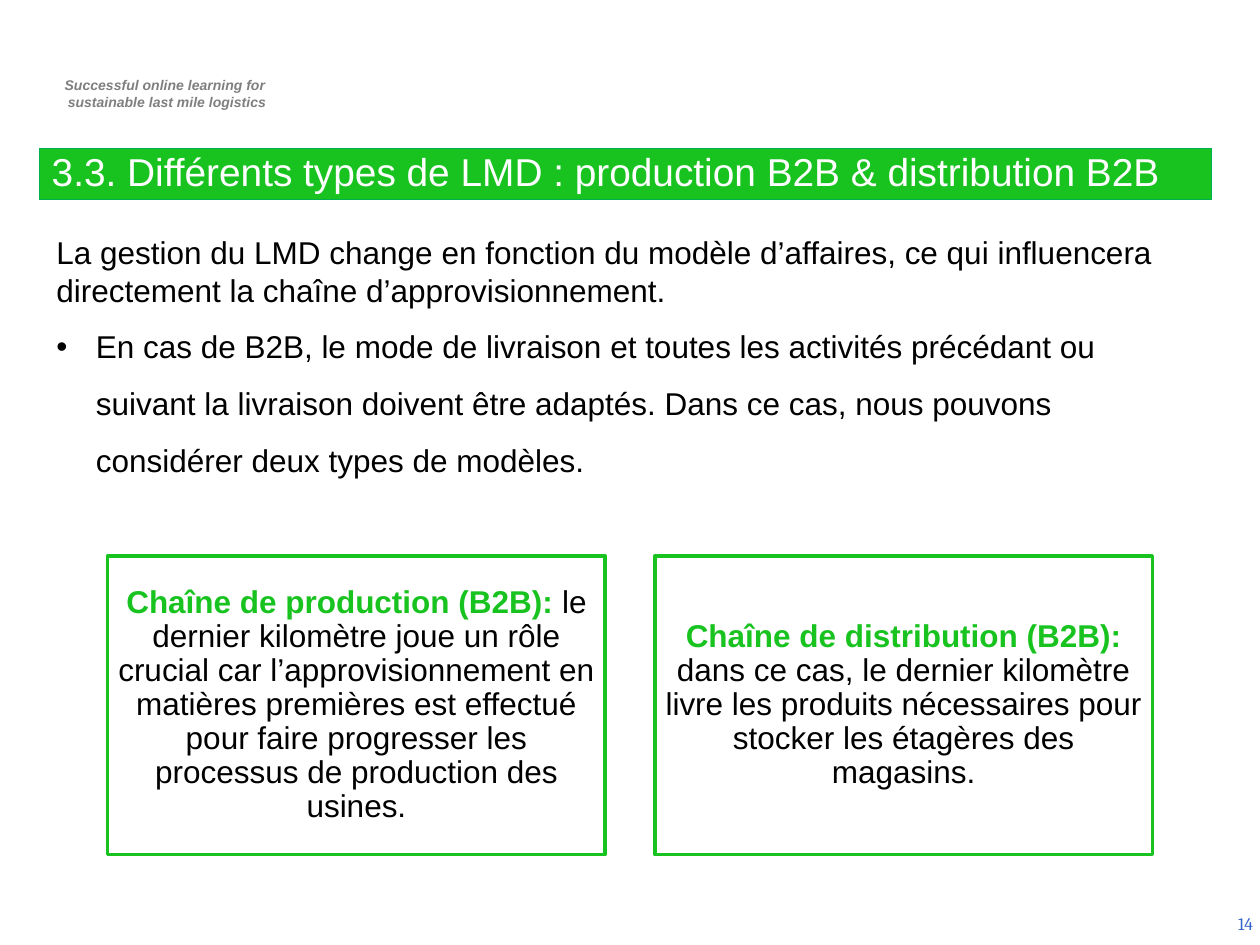
from lxml import etree
from pptx import Presentation
from pptx.dml.color import RGBColor
from pptx.enum import shapes, text
from pptx.oxml.ns import qn
from pptx.util import Pt

GREEN, BLACK, WHITE = "18C320", "000000", "FFFFFF"
LEFT, CENTER, RIGHT = text.PP_ALIGN.LEFT, text.PP_ALIGN.CENTER, text.PP_ALIGN.RIGHT
TOP, MIDDLE, BOTTOM = (text.MSO_ANCHOR.TOP, text.MSO_ANCHOR.MIDDLE,
                       text.MSO_ANCHOR.BOTTOM)


def color(code):
    return RGBColor.from_string(code)


def set_frame(shape, anchor=TOP, pad=(7.2, 3.6)):
    frame = shape.text_frame
    frame.word_wrap = True
    frame.vertical_anchor = anchor
    frame.margin_left = frame.margin_right = Pt(pad[0])
    frame.margin_top = frame.margin_bottom = Pt(pad[1])
    return frame


def add_label(slide, box, anchor=TOP):
    return set_frame(slide.shapes.add_textbox(*map(Pt, box)), anchor)


def add_rect(slide, box, fill, line, width):
    rect = slide.shapes.add_shape(shapes.MSO_SHAPE.RECTANGLE, *map(Pt, box))
    rect.shadow.inherit = False
    rect.fill.solid()
    rect.fill.fore_color.rgb = color(fill)
    rect.line.color.rgb = color(line)
    rect.line.width = Pt(width)
    return rect


def set_indent(para, left, first=0):
    props = para._p.get_or_add_pPr()
    props.set("marL", str(Pt(left)))
    props.set("indent", str(Pt(first)))
    return props


def style(run, size, code, bold=False, italic=False, name="Arial"):
    font = run.font
    font.name, font.size = name, Pt(size)
    font.bold, font.italic = bold, italic
    font.color.rgb = color(code)


def write(para, words, size, code, align=LEFT, spacing=1.0, **look):
    para.text = words
    para.alignment = align
    para.line_spacing = spacing
    style(para.runs[0], size, code, **look)


def add_header(slide, box):
    frame = add_label(slide, box)
    frame.text = "Successful online learning for \nsustainable last mile logistics"
    for para in frame.paragraphs:
        set_indent(para, 2.9)
        write(para, para.text, 8, "7F7F7F", CENTER, bold=True, italic=True)


def add_title(slide, box):
    frame = set_frame(add_rect(slide, box, GREEN, "00B050", 0.75), BOTTOM)
    para = frame.paragraphs[0]
    set_indent(para, 58.3, -58.3)
    write(para, "3.3. Différents types de LMD : production B2B & distribution B2B",
          22.2, WHITE, spacing=0.8)


def add_body(slide, box):
    frame = add_label(slide, box)
    write(frame.paragraphs[0],
          "La gestion du LMD change en fonction du modèle d’affaires, ce qui "
          "influencera directement la chaîne d’approvisionnement.", 18, BLACK)
    para = frame.add_paragraph()
    write(para,
          "En cas de B2B, le mode de livraison et toutes les activités précédant "
          "ou suivant la livraison doivent être adaptés. Dans ce cas, nous pouvons "
          "considérer deux types de modèles.", 18, BLACK, spacing=1.5)
    props = set_indent(para, 22.5, -22.5)
    etree.SubElement(props, qn("a:buFont")).set("typeface", "Arial")
    etree.SubElement(props, qn("a:buChar")).set("char", "•")


def add_card(slide, box, head, words):
    frame = set_frame(add_rect(slide, box, WHITE, GREEN, 2), MIDDLE, (5, 5))
    para = frame.paragraphs[0]
    write(para, head + " ", 18, GREEN, CENTER, 0.9, bold=True)
    run = para.add_run()
    run.text = words
    style(run, 18, BLACK)


def add_cards(slide, box, gap, cards):
    """Share the width of the box equally between the cards."""
    left, top, width, height = box
    wide = (width - gap * (len(cards) - 1)) / len(cards)
    for i, (head, words) in enumerate(cards):
        add_card(slide, (left + i * (wide + gap), top, wide, height), head, words)


def add_number(slide, box):
    para = add_label(slide, box, MIDDLE).paragraphs[0]
    write(para, "14", 10, "3366CC", RIGHT, name="Cambria")


def main():
    deck = Presentation()
    deck.slide_width, deck.slide_height = Pt(720), Pt(540)
    slide = deck.slides.add_slide(deck.slide_layouts[6])
    add_header(slide, (21, 40.3, 146, 26.6))
    add_number(slide, (555, 513.4, 168, 28.8))
    add_title(slide, (22.5, 84.7, 670, 29.5))
    add_body(slide, (25.2, 129.6, 670, 170.6))
    add_cards(slide, (61.5, 317.7, 597, 170.6), 28.4, [
        ("Chaîne de production (B2B):",
         "le dernier kilomètre joue un rôle crucial car l’approvisionnement en "
         "matières premières est effectué pour faire progresser les processus "
         "de production des usines."),
        ("Chaîne de distribution (B2B):",
         "dans ce cas, le dernier kilomètre livre les produits nécessaires pour "
         "stocker les étagères des magasins."),
    ])
    deck.save("out.pptx")


if __name__ == "__main__":
    main()
